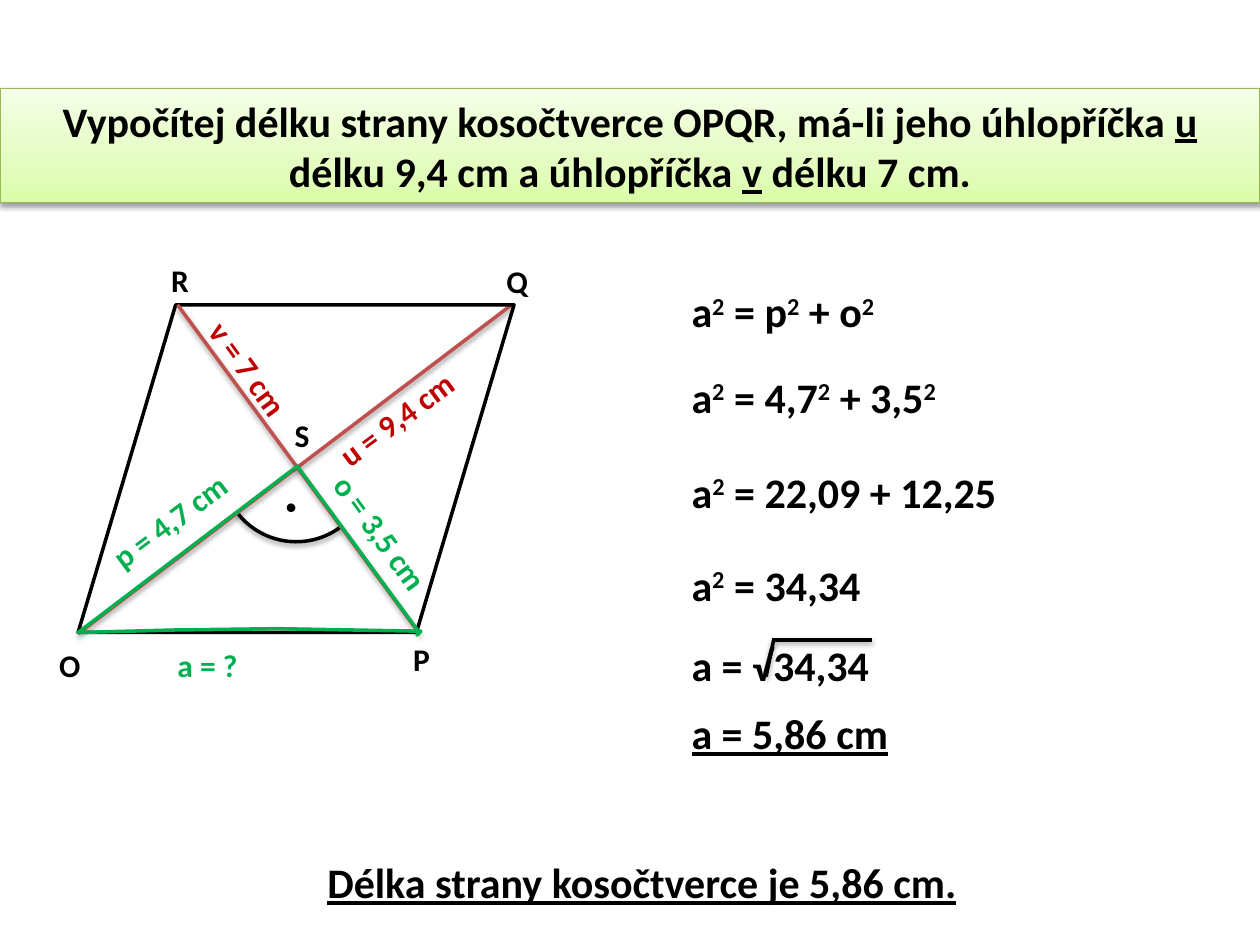
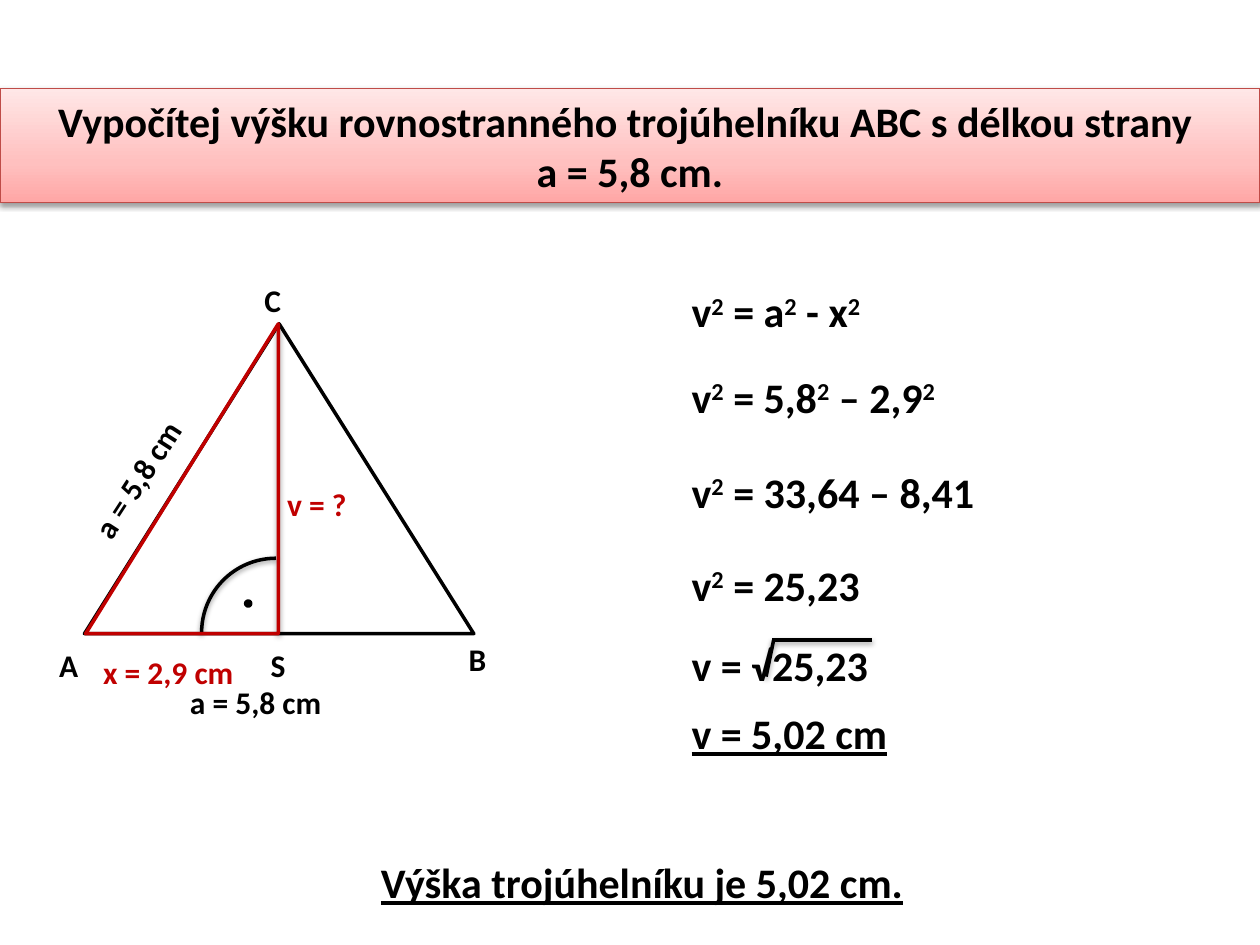
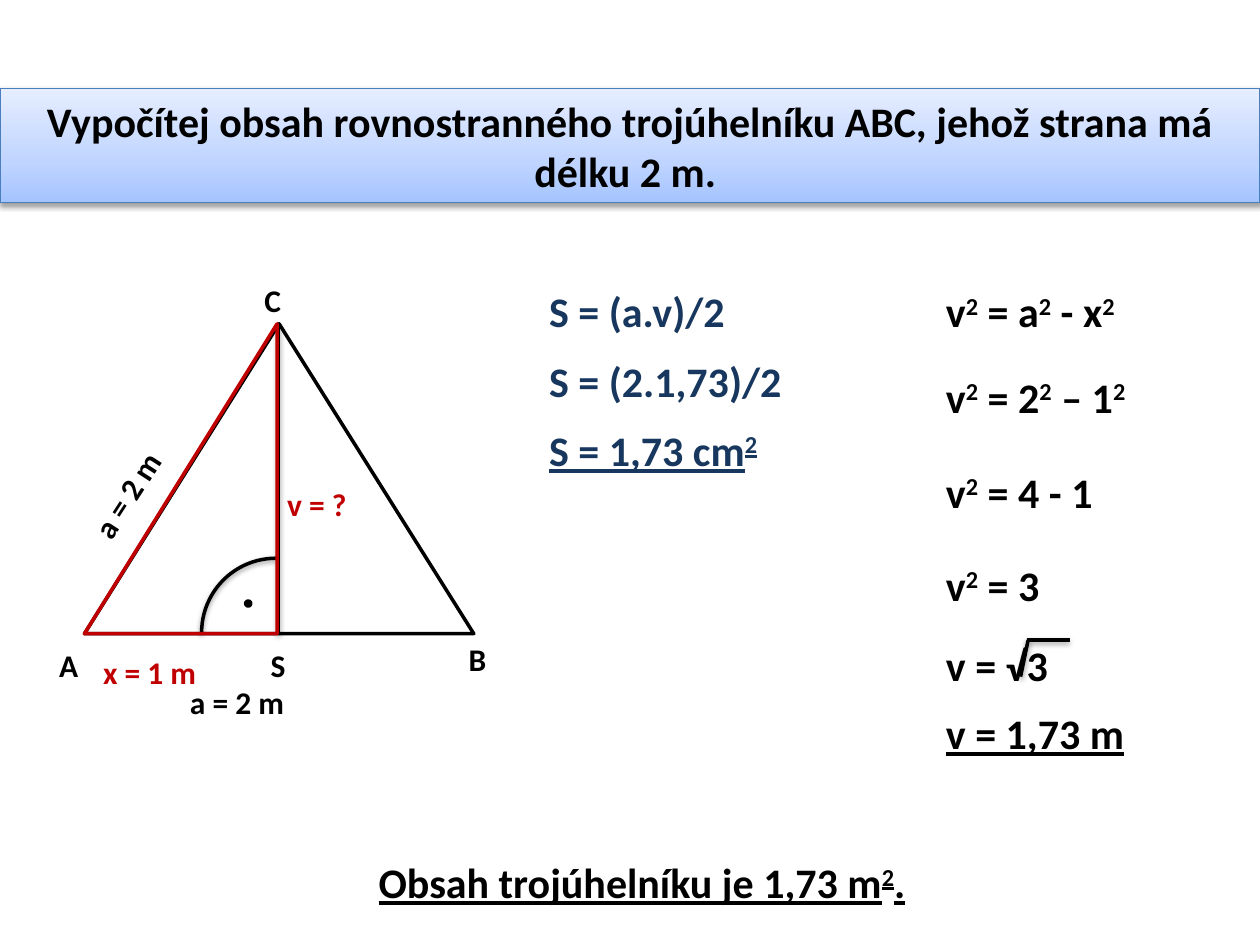
"""Builds three worked geometry problems about a rhombus and equilateral triangles."""
from lxml.etree import SubElement
from pptx import Presentation
from pptx.dml.color import RGBColor
from pptx.enum.shapes import MSO_CONNECTOR, MSO_SHAPE
from pptx.enum.text import MSO_AUTO_SIZE, PP_ALIGN
from pptx.oxml.ns import qn
from pptx.util import Inches, Pt

BLACK, RED, GREEN, NAVY, BRICK = "000000", "C00000", "00B050", "17375E", "C0504D"
GREEN_BAND = ("DAFDA7", "E4FCC2", "F5FFE7"), "98B955"
RED_BAND = ("FFA6A5", "FFC0BF", "FFE7E7"), "BF4C48"
BLUE_BAND = ("A4C4FF", "BFD4FF", "E6EEFF"), "4B7EBC"
STEP_TOPS = (2.22, 2.9, 3.65, 4.39, 5.03, 5.57)


def rgb(color):
    return RGBColor.from_string(color)


def inches(*values):
    return [Inches(value) for value in values]


class Worksheet:
    font = "Calibri"
    label_size = 18
    step_size = 24

    def __init__(self):
        self.deck = Presentation()
        self.deck.slide_width, self.deck.slide_height = inches(10, 7.5)
        self.slide = None

    def typeset(self, frame, text, size, color=BLACK, underline=False,
                centered=False, accent="superscript"):
        frame.word_wrap = True
        frame.auto_size = MSO_AUTO_SIZE.SHAPE_TO_FIT_TEXT
        paragraph = frame.paragraphs[0]
        paragraph.alignment = PP_ALIGN.CENTER if centered else PP_ALIGN.LEFT
        first, *others = text.split("|")
        paragraph.text = first
        for part in others:
            paragraph.add_run().text = part
        for run in paragraph.runs:
            run.font.name = self.font
            run.font.size = Pt(size)
            run.font.bold = True
            run.font.underline = underline
            run.font.color.rgb = rgb(color)
        for run in paragraph.runs[1::2] if others else []:
            if accent == "underline":
                run.font.underline = True
            else:
                run._r.get_or_add_rPr().set("baseline", "30000")

    def stroke(self, element, color, width=2, shadow=False):
        element.line.color.rgb = rgb(color)
        element.line.width = Pt(width)
        properties = element._element.spPr
        effects = properties.find(qn("a:effectLst"))
        if effects is None:
            effects = SubElement(properties, qn("a:effectLst"))
        if shadow:
            cast = SubElement(effects, qn("a:outerShdw"), blurRad=str(Pt(3.1)),
                              dist=str(Pt(1.6)), dir="5400000", rotWithShape="0")
            tint = SubElement(cast, qn("a:srgbClr"), val=BLACK)
            SubElement(tint, qn("a:alpha"), val="38000")

    def problem(self, question, band):
        self.slide = self.deck.slides.add_slide(self.deck.slide_layouts[5])
        title = self.slide.shapes.title
        title.left, title.top, title.width, title.height = inches(0, 0.7, 10, 0.91)
        self.typeset(title.text_frame, question, self.step_size,
                     centered=True, accent="underline")
        shades, border = band
        title.fill.gradient()
        title.fill.gradient_angle = 90
        stops = title._element.spPr.find(qn("a:gradFill")).find(qn("a:gsLst"))
        stops.clear()
        for position, shade in zip((0, 35, 100), shades):
            stop = SubElement(stops, qn("a:gs"), pos=str(position * 1000))
            SubElement(stop, qn("a:srgbClr"), val=shade)
        self.stroke(title, border, 0.75, shadow=True)

    def text(self, text, left, top, width, size, height=0.5, rotation=0, **style):
        box = self.slide.shapes.add_textbox(*inches(left, top, width, height))
        box.rotation = rotation
        self.typeset(box.text_frame, text, size, **style)

    def label(self, text, left, top, width=0.39, color=BLACK, rotation=0):
        self.text(text, left, top, width, self.label_size, 0.4, rotation, color=color)

    def step(self, text, left, top, width=2.07, **style):
        self.text(text, left, top, width, self.step_size, **style)

    def shape(self, kind, left, top, width, height, rotation=0, fill=None, shadow=False):
        figure = self.slide.shapes.add_shape(kind, *inches(left, top, width, height))
        figure.rotation = rotation
        figure.shadow.inherit = False
        if fill:
            figure.fill.solid()
            figure.fill.fore_color.rgb = rgb(fill)
        else:
            figure.fill.background()
        self.stroke(figure, BLACK, shadow=shadow)
        return figure

    def line(self, start, end, color=BLACK):
        segment = self.slide.shapes.add_connector(
            MSO_CONNECTOR.STRAIGHT, *inches(*start, *end))
        self.stroke(segment, color, shadow=True)

    def outline(self, points, color):
        start, *corners = [inches(*point) for point in points]
        builder = self.slide.shapes.build_freeform(*start)
        builder.add_line_segments(corners, close=True)
        figure = builder.convert_to_shape()
        figure.shadow.inherit = False
        figure.fill.background()
        self.stroke(figure, color)

    def right_angle(self, left, top, rotation, dot_left, dot_top):
        self.shape(MSO_SHAPE.ARC, left, top, 1.18, 1.18, rotation, shadow=True)
        self.shape(MSO_SHAPE.OVAL, dot_left, dot_top, 0.04, 0.04, fill=BLACK)

    def solution(self, left, steps, answer, root_end=1.53, third_width=3.15):
        widths = (2.07, 2.36, third_width, 2.07, 2.07, 2.07)
        for text, top, width in zip(steps, STEP_TOPS, widths):
            self.step(text, left, top, width, underline=top == STEP_TOPS[-1])
        self.line((left + 0.74, 5.08), (left + root_end, 5.08))
        self.line((left + 0.75, 5.08), (left + 0.69, 5.37))
        self.step(answer, 0.47, 6.75, 9.25, underline=True, centered=True)

    def triangle(self, side, half, corner):
        self.right_angle(1.6, 4.43, 270, 1.95, 4.77)
        for name, left, top in (("A", 0.37, 5.08), ("B", 3.62, 5.03),
                                ("C", 2, 2.18), ("S", 2.05, 5.08)):
            self.label(name, left, top)
        self.label(f"a = {side}", 1.41, 5.37, 1.33)
        self.label("v = ?", 2.18, 3.8, 1.54, RED)
        self.label(f"a = {side}", 0.4, 3.48, 1.53, rotation=302.9)
        self.label(f"x = {half}", 0.72, 5.13, 1.53, RED)
        self.shape(MSO_SHAPE.ISOSCELES_TRIANGLE, 0.67, 2.57, 3.09, 2.46)
        self.line((2.21, 2.57), (2.21, 5.03))
        foot = corner + 1.53
        self.outline([(corner, 5.03), (foot, 5.03), (foot, 2.57)], RED)

    def rhombus(self):
        self.right_angle(1.76, 3.12, 143, 2.29, 4.01)
        self.line((0.62, 5.03), (4.06, 2.42), BRICK)
        sides = self.shape(MSO_SHAPE.PARALLELOGRAM, 0.62, 2.42, 3.46, 2.6)
        sides.adjustments[0] = 0.298
        self.line((1.41, 2.42), (3.33, 5.03), BRICK)
        self.outline([(0.62, 5.02), (1.4, 5), (2.2, 4.99), (3.34, 5.01),
                      (3.31, 5.04), (3.32, 5.01), (2.36, 3.7)], GREEN)
        for name, left, top in (("O", 0.37, 5.08), ("P", 3.18, 5.03), ("Q", 3.92, 2.03),
                                ("R", 1.26, 2.02), ("S", 2.24, 3.25)):
            self.label(name, left, top)
        self.label("a = ?", 1.31, 5.08, 1.54, GREEN)
        self.label("u = 9,4 cm", 2.51, 3.1, 1.33, RED, 323.4)
        self.label("p = 4,7 cm", 0.71, 3.91, 1.33, GREEN, 323.4)
        self.label("v = 7 cm", 1.35, 2.92, 1.53, RED, 54.1)
        self.label("o = 3,5 cm", 2.34, 4.14, 1.53, GREEN, 54.1)


def main():
    sheet = Worksheet()

    sheet.problem("Vypočítej délku strany kosočtverce OPQR, má-li jeho úhlopříčka |u |"
                  "délku 9,4 cm a úhlopříčka |v| délku 7 cm.", GREEN_BAND)
    sheet.solution(5.39, ("a|2| = p|2| + o|2", "a|2| = 4,7|2| + 3,5|2",
                          "a|2| = 22,09 + 12,25", "a|2| = 34,34",
                          "a = √34,34", "a = 5,86 cm"),
                   "Délka strany kosočtverce je 5,86 cm.")
    sheet.rhombus()

    sheet.problem("Vypočítej výšku rovnostranného trojúhelníku ABC s délkou strany "
                  "\va = 5,8 cm.", RED_BAND)
    sheet.solution(5.39, ("v|2| = a|2| - x|2", "v|2| = 5,8|2| – 2,9|2",
                          "v|2| = 33,64 – 8,41", "v|2| = 25,23",
                          "v = √25,23", "v = 5,02 cm"),
                   "Výška trojúhelníku je 5,02 cm.")
    sheet.triangle("5,8 cm", "2,9 cm", corner=0.68)

    sheet.problem("Vypočítej obsah rovnostranného trojúhelníku ABC, jehož strana má "
                  "délku 2 m. ", BLUE_BAND)
    sheet.solution(7.41, ("v|2| = a|2| - x|2", "v|2| = 2|2| – 1|2", "v|2| = 4 - 1",
                          "v|2| = 3", "v = √3", "v = 1,73 m"),
                   "Obsah trojúhelníku je 1,73 m|2|.", root_end=1.08, third_width=1.67)
    sheet.triangle("2 m", "1 m", corner=0.67)
    area_steps = ("S = (a.v)/2", "S = (2.1,73)/2", "S = 1,73 cm|2")
    for row, area in enumerate(area_steps):
        sheet.step(area, 4.26, 2.22 + row * 0.55, color=NAVY,
                   underline=area == area_steps[-1])

    sheet.deck.save("out.pptx")


if __name__ == "__main__":
    main()
